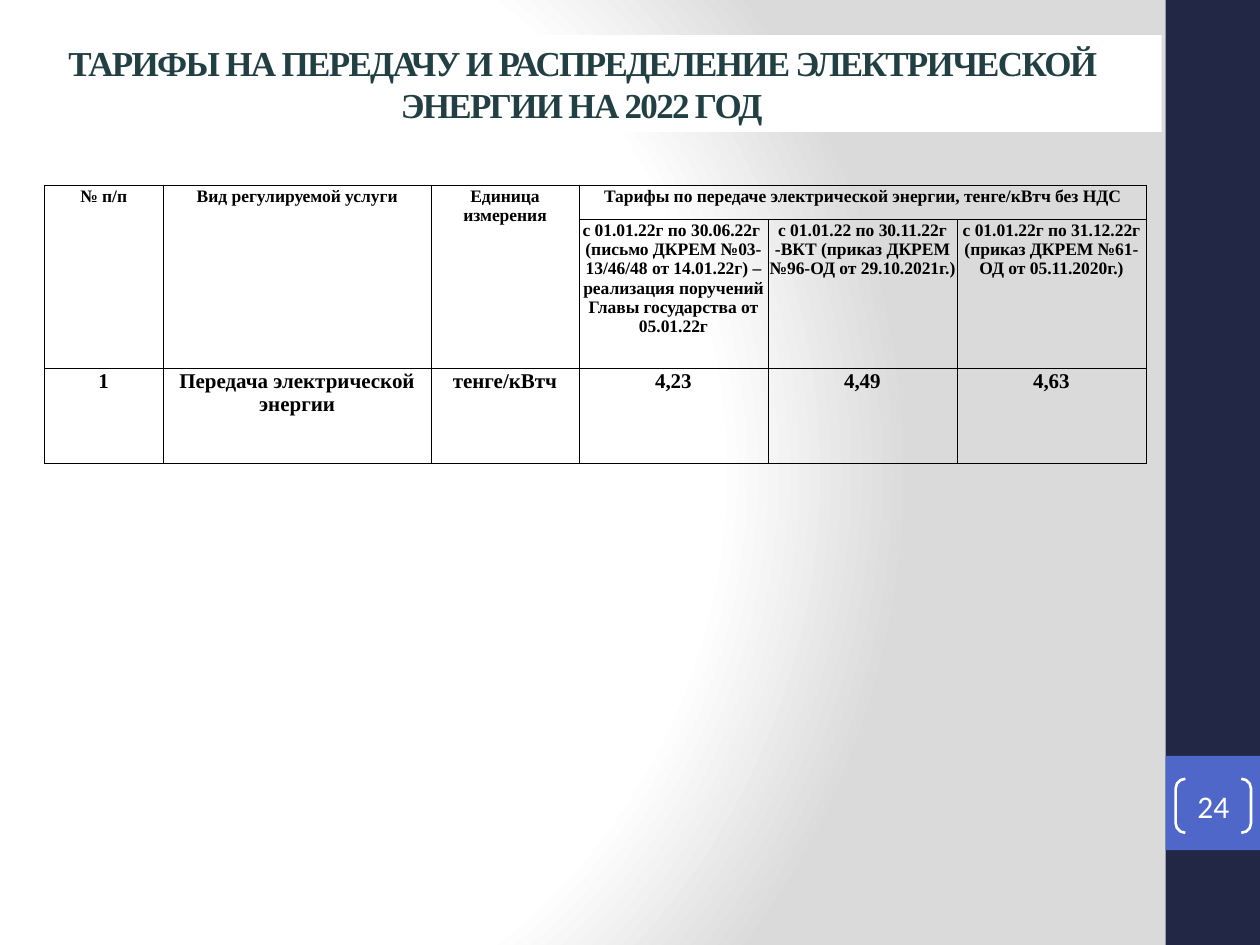
"""Build the slide with the 2022 electricity transmission tariffs."""
from dataclasses import dataclass

from lxml import etree
from pptx import Presentation
from pptx.dml.color import RGBColor
from pptx.enum import shapes, text
from pptx.oxml import ns
from pptx.util import Cm, Pt


@dataclass(frozen=True)
class Theme:
    white: str = "FFFFFF"
    shade: str = "DADADA"
    navy: str = "212745"
    blue: str = "4E67C8"
    teal: str = "224043"
    black: str = "000000"
    serif: str = "Times New Roman"
    sans: str = "Calibri"
    title_size: int = 20
    number_size: int = 18
    body_size: int = 12
    header_size: int = 10
    border: float = 0.5


THEME = Theme()
COLUMNS = (2.4, 5.4, 2.98, 3.81, 3.81, 3.81)
ROWS = (0.69, 3, 1.92)
CONTENT = (
    ("№ п/п", "Вид регулируемой услуги", "Единица измерения",
     "Тарифы по передаче электрической энергии, тенге/кВтч без НДС", "", ""),
    ("", "", "",
     "с 01.01.22г по 30.06.22г \n(письмо ДКРЕМ №03-13/46/48 от 14.01.22г) – "
     "реализация поручений Главы государства от 05.01.22г",
     "с 01.01.22 по 30.11.22г\n-ВКТ (приказ ДКРЕМ №96-ОД от 29.10.2021г.)",
     "с 01.01.22г по 31.12.22г (приказ ДКРЕМ №61-ОД от 05.11.2020г.)"),
    ("1", "Передача электрической энергии", "тенге/кВтч", "4,23", "4,49", "4,63"),
)
MERGES = (((0, 0), (1, 0)), ((0, 1), (1, 1)), ((0, 2), (1, 2)), ((0, 3), (0, 5)))


def apply_format(target, values):
    """Set each named attribute of the target."""
    for name, value in values.items():
        setattr(target, name, value)


def set_background(page):
    """Give the page a circular gradient centred left of the middle."""
    stops = ((0, THEME.white), (75, THEME.white), (100, THEME.shade))
    stop_xml = "".join(
        f'<a:gs pos="{place * 1000}"><a:srgbClr val="{color}"/></a:gs>' for place, color in stops)
    page.element.cSld.insert(0, etree.fromstring(
        f'<p:bg {ns.nsdecls("p", "a")}><p:bgPr><a:gradFill rotWithShape="1">'
        f'<a:gsLst>{stop_xml}</a:gsLst><a:path path="circle">'
        '<a:fillToRect l="20000" t="50000" r="100000" b="50000"/></a:path>'
        '</a:gradFill><a:effectLst/></p:bgPr></p:bg>',
        parser=page.element.getroottree().parser))


def write(frame, content, size, color, face, bold=False):
    """Write one centred paragraph and return it."""
    para = frame.paragraphs[0]
    para.text = content
    para.alignment = text.PP_ALIGN.CENTER
    for span in para.runs:
        apply_format(span.font, {"size": Pt(size), "name": face, "bold": bold})
        span.font.color.rgb = RGBColor.from_string(color)
    return para


def add_box(page, place, fill=None, kind=shapes.MSO_SHAPE.RECTANGLE):
    """Add a shape without outline or shadow, filled if a colour is given."""
    box = page.shapes.add_shape(kind, *map(Cm, place))
    box.shadow.inherit = False
    box.line.fill.background()
    if fill:
        box.fill.solid()
        box.fill.fore_color.rgb = RGBColor.from_string(fill)
    else:
        box.fill.background()
    apply_format(box.text_frame, {"word_wrap": True, "vertical_anchor": text.MSO_ANCHOR.MIDDLE})
    return box


def add_title(page, content):
    """Add the white title band with tightened lettering."""
    band = add_box(page, (0.03, 0.71, 23.39, 1.95), THEME.white)
    para = write(band.text_frame, content, THEME.title_size, THEME.teal, THEME.serif, True)
    for span in para.runs:
        span.font._element.set("spc", "-100")


def add_page_number(page, number):
    """Add the page number between its brackets."""
    bracket = add_box(page, (23.7, 15.7, 1.52, 1.09), kind=shapes.MSO_SHAPE.DOUBLE_BRACKET)
    bracket.adjustments[0] = 0.18
    bracket.line.color.rgb = RGBColor.from_string(THEME.white)
    bracket.line.width = Pt(1.5)
    sides = ("left", "top", "right", "bottom")
    apply_format(bracket.text_frame, {f"margin_{side}": 0 for side in sides})
    write(bracket.text_frame, number, THEME.number_size, THEME.white, THEME.sans)


def outline_cell(cell):
    """Draw thin lines on all four sides of a cell and clear its fill."""
    properties = cell._tc.get_or_add_tcPr()
    for side in "LRTB":
        line = etree.SubElement(properties, ns.qn(f"a:ln{side}"), w=str(Pt(THEME.border)))
        fill = etree.SubElement(line, ns.qn("a:solidFill"))
        etree.SubElement(fill, ns.qn("a:srgbClr"), val=THEME.black)
    cell.fill.background()


def add_tariff_table(page):
    """Add the tariff table with its merged two-level header."""
    place = (0.89, 3.73, sum(COLUMNS), sum(ROWS))
    table = page.shapes.add_table(len(ROWS), len(COLUMNS), *map(Cm, place)).table
    apply_format(table, {"first_row": False, "horz_banding": False})
    for column, width in zip(table.columns, COLUMNS):
        column.width = Cm(width)
    for row, height in zip(table.rows, ROWS):
        row.height = Cm(height)
    margins = {"margin_left": Cm(0.03), "margin_right": Cm(0.03),
               "margin_top": Cm(0.03), "margin_bottom": 0}
    for index, (row, contents) in enumerate(zip(table.rows, CONTENT)):
        size = THEME.header_size if index < 2 else THEME.body_size
        for cell, content in zip(row.cells, contents):
            apply_format(cell, margins)
            outline_cell(cell)
            if content:
                write(cell.text_frame, content, size, THEME.black, THEME.serif, True)
    for first, last in MERGES:
        table.cell(*first).merge(table.cell(*last))


def main():
    """Build and save the deck."""
    deck = Presentation()
    apply_format(deck, {"slide_width": Cm(25.4), "slide_height": Cm(19.05)})
    page = deck.slides.add_slide(deck.slide_layouts[6])
    set_background(page)
    add_box(page, (23.5, 0, 1.9, 19.05), THEME.navy)
    add_box(page, (23.5, 15.24, 1.9, 1.9), THEME.blue)
    add_page_number(page, "24")
    add_title(page, "ТАРИФЫ НА ПЕРЕДАЧУ И РАСПРЕДЕЛЕНИЕ ЭЛЕКТРИЧЕСКОЙ ЭНЕРГИИ НА 2022 ГОД")
    add_tariff_table(page)
    deck.save("out.pptx")


if __name__ == "__main__":
    main()
